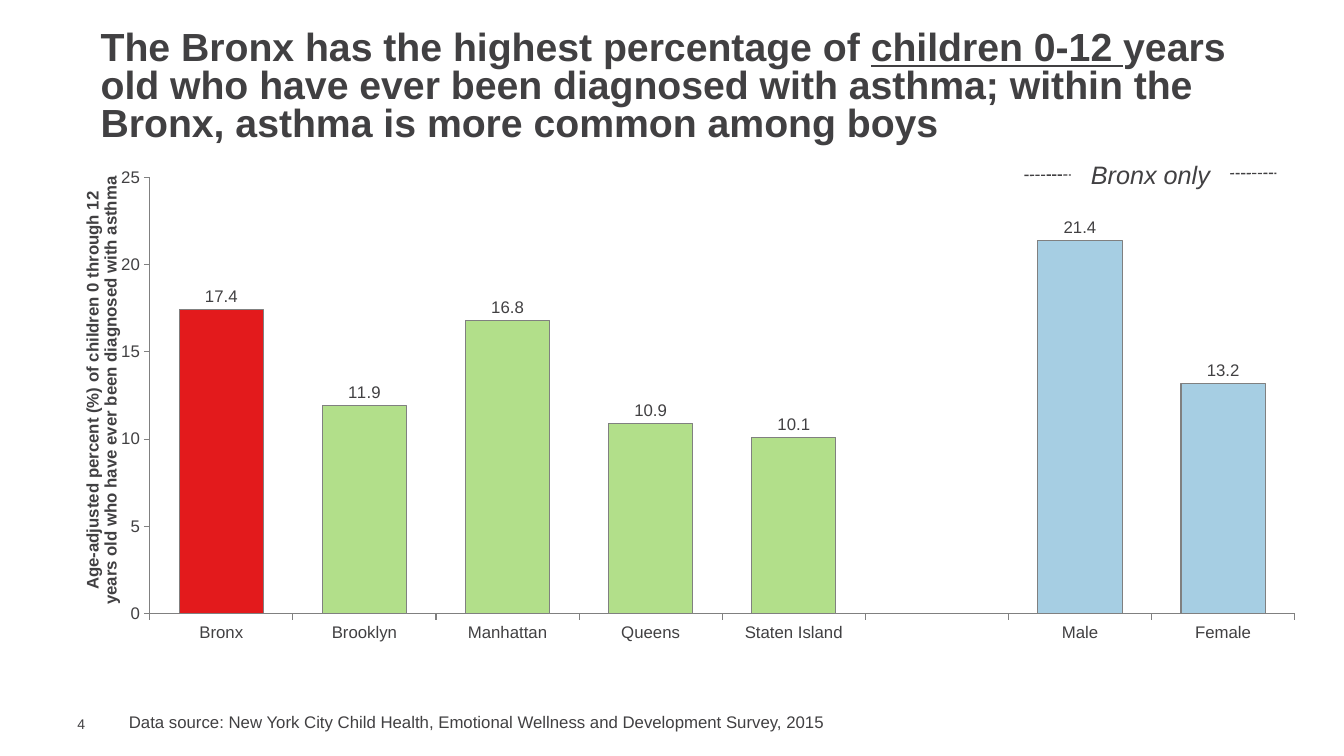
import lxml.etree
import pptx
import pptx.chart.data
import pptx.dml.color
import pptx.enum.chart
import pptx.enum.dml
import pptx.enum.shapes
import pptx.enum.text
import pptx.oxml
import pptx.oxml.ns
import pptx.util

Inches = pptx.util.Inches
Pt = pptx.util.Pt
Color = pptx.dml.color.RGBColor.from_string
Anchor = pptx.enum.text.MSO_ANCHOR

theme = {
    "font": "Arial", "text": "414042", "paper": "FFFFFF", "axis": "808080",
    "bronx": "E31A1C", "borough": "B2DF8A", "sex": "A6CEE3",
    "title": 28, "note": 18, "body": 12, "number": 10,
}


def write(shape, runs, size, anchor=Anchor.TOP):
    frame = shape.text_frame
    frame.word_wrap = True
    frame.auto_size = pptx.enum.text.MSO_AUTO_SIZE.SHAPE_TO_FIT_TEXT
    frame.vertical_anchor = anchor
    paragraph = frame.paragraphs[0]
    for text, style in runs:
        run = paragraph.add_run()
        run.text = text
        run.font.name = theme["font"]
        run.font.size = Pt(theme[size])
        run.font.color.rgb = Color(theme["text"])
        for name, value in style.items():
            setattr(run.font, name, value)
    return paragraph


def manual_layout(target, **values):
    for old in target.findall(pptx.oxml.ns.qn("c:layout")):
        target.remove(old)
    items = "".join(f'<c:{name} val="{value}"/>' for name, value in values.items())
    return pptx.oxml.parse_xml(
        f'<c:layout {pptx.oxml.ns.nsdecls("c")}><c:manualLayout>{items}'
        "</c:manualLayout></c:layout>")


presentation = pptx.Presentation()
presentation.slide_width = Inches(13.33)
presentation.slide_height = Inches(7.5)
slide = presentation.slides.add_slide(presentation.slide_layouts[6])

number = slide.shapes.add_textbox(Inches(0.67), Inches(7.1), Inches(0.43), Inches(0.17))
number.text_frame.margin_top = number.text_frame.margin_bottom = 0
number.text_frame.margin_right = 0
write(number, [("4", {})], "number", Anchor.MIDDLE)

title = slide.shapes.add_textbox(Inches(0.9), Inches(0.26), Inches(11.54), Inches(1.23))
headline = write(title, [
    ("The Bronx has the highest percentage of ", {"bold": True}),
    ("children 0-12 ", {"bold": True, "underline": True}),
    ("years old who have ever been diagnosed with asthma; within the Bronx, "
     "asthma is more common among boys", {"bold": True}),
], "title", Anchor.MIDDLE)
headline.line_spacing = 0.8

data = pptx.chart.data.CategoryChartData()
data.categories = ["Bronx", "Brooklyn", "Manhattan", "Queens", "Staten Island",
                   "", "Male", "Female"]
data.add_series("Series 1", [17.4, 11.9, 16.8, 10.9, 10.1, None, 21.4, 13.2])
chart = slide.shapes.add_chart(
    pptx.enum.chart.XL_CHART_TYPE.COLUMN_CLUSTERED,
    Inches(0.66), Inches(1.61), Inches(12.33), Inches(5.57), data).chart
chart.has_legend = False
chart.has_title = False
chart.font.name = theme["font"]
chart.font.size = Pt(theme["body"])
chart.font.color.rgb = Color(theme["text"])

plot = chart.plots[0]
plot.vary_by_categories = False
plot.gap_width = 70
series = plot.series[0]
points = {0: "bronx", 6: "sex", 7: "sex"}
for column in [series] + [series.points[index] for index in points]:
    column.format.line.color.rgb = Color(theme["axis"])
    column.format.line.width = Pt(0.75)
series.format.fill.solid()
series.format.fill.fore_color.rgb = Color(theme["borough"])
for index, name in points.items():
    fill = series.points[index].format.fill
    fill.solid()
    fill.fore_color.rgb = Color(theme[name])

plot.has_data_labels = True
labels = plot.data_labels
labels.show_value = True
labels.number_format = "#,##0.0"
labels.number_format_is_linked = False
labels.position = pptx.enum.chart.XL_LABEL_POSITION.OUTSIDE_END

for axis in (chart.category_axis, chart.value_axis):
    axis.has_major_gridlines = False
    axis.major_tick_mark = pptx.enum.chart.XL_TICK_MARK.OUTSIDE
    axis.format.line.color.rgb = Color(theme["axis"])
    axis.format.line.width = Pt(0.75)
value_axis = chart.value_axis
value_axis.minimum_scale = 0
value_axis.maximum_scale = 25
value_axis.major_unit = 5
value_axis.has_title = True
axis_title = value_axis.axis_title
axis_run = axis_title.text_frame.paragraphs[0].add_run()
axis_run.text = ("Age-adjusted percent (%) of children 0 through 12 years old "
                 "who have ever been diagnosed with asthma")
axis_run.font.name = theme["font"]
axis_run.font.size = Pt(theme["body"])
axis_run.font.bold = True
axis_run.font.color.rgb = Color(theme["text"])
body = axis_title.text_frame._txBody.bodyPr
body.set("rot", "-5400000")
body.set("vert", "horz")
title_element = axis_title._element
title_layout = manual_layout(title_element, xMode="edge", yMode="edge", x=0.01, y=0.02)
title_element.find(pptx.oxml.ns.qn("c:tx")).addnext(title_layout)

plot_area = chart._chartSpace.chart.plotArea
plot_layout = manual_layout(plot_area, layoutTarget="inner", xMode="edge", yMode="edge",
                            x=0.067, y=0.027, w=0.921, h=0.777)
plot_area.insert(0, plot_layout)

bracket = slide.shapes.add_connector(
    pptx.enum.shapes.MSO_CONNECTOR.STRAIGHT,
    Inches(10.16), Inches(1.74), Inches(12.66), Inches(1.72))
bracket.line.color.rgb = Color(theme["text"])
bracket.line.width = Pt(1)
bracket.line.dash_style = pptx.enum.dml.MSO_LINE.SQUARE_DOT
lxml.etree.SubElement(bracket._element.spPr, pptx.oxml.ns.qn("a:effectLst"))

bronx_only = slide.shapes.add_shape(
    pptx.enum.shapes.MSO_SHAPE.RECTANGLE,
    Inches(10.62), Inches(1.53), Inches(1.58), Inches(0.4))
bronx_only.shadow.inherit = False
bronx_only.fill.solid()
bronx_only.fill.fore_color.rgb = Color(theme["paper"])
bronx_only.line.fill.background()
note = write(bronx_only, [("Bronx only", {"italic": True})], "note")
note.alignment = pptx.enum.text.PP_ALIGN.CENTER

source = slide.shapes.add_textbox(Inches(1.18), Inches(7.01), Inches(9.92), Inches(0.3))
write(source, [("Data source: New York City Child Health, Emotional Wellness and "
                "Development Survey, 2015", {})], "body")

presentation.save("out.pptx")
